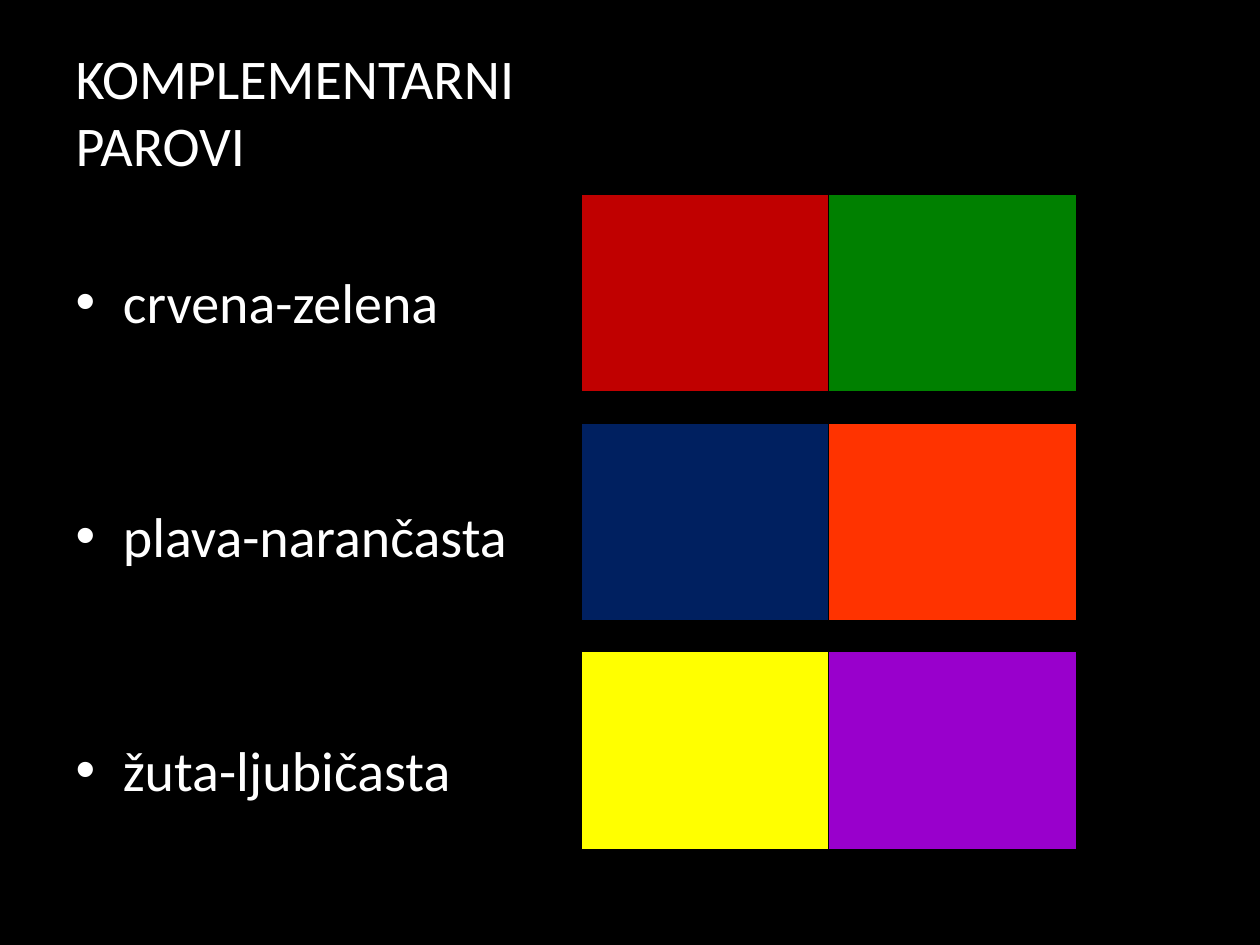
from pptx import Presentation
from pptx.dml.color import RGBColor
from pptx.enum import shapes, text
from pptx.util import Pt

BLACK = RGBColor(0x00, 0x00, 0x00)
WHITE = RGBColor(0xFF, 0xFF, 0xFF)
RED = RGBColor(0xC0, 0x00, 0x00)
GREEN = RGBColor(0x00, 0x80, 0x00)
BLUE = RGBColor(0x00, 0x20, 0x60)
ORANGE = RGBColor(0xFF, 0x33, 0x00)
YELLOW = RGBColor(0xFF, 0xFF, 0x00)
VIOLET = RGBColor(0x99, 0x00, 0xCC)

PAIRS = [
    ("crvena-zelena", RED, GREEN),
    ("plava-narančasta", BLUE, ORANGE),
    ("žuta-ljubičasta", YELLOW, VIOLET),
]


def write(paragraph, words, size=32, font="Calibri", color=WHITE, before=0):
    paragraph.alignment = text.PP_ALIGN.LEFT
    paragraph.space_before = Pt(before)
    run = paragraph.add_run()
    run.text = words
    run.font.size = Pt(size)
    run.font.name = font
    run.font.color.rgb = color


def place(placeholder, left, top, width, height):
    placeholder.left, placeholder.top = Pt(left), Pt(top)
    placeholder.width, placeholder.height = Pt(width), Pt(height)
    frame = placeholder.text_frame
    frame.word_wrap = True
    frame.auto_size = text.MSO_AUTO_SIZE.NONE
    frame.vertical_anchor = text.MSO_ANCHOR.TOP
    return frame


def add_heading(slide, left, top, width, height):
    frame = place(slide.shapes.title, left, top, width, height)
    write(frame.paragraphs[0], "KOMPLEMENTARNI PAROVI")


def add_pair_names(slide, left, top, width, height, gap=95.3):
    frame = place(slide.placeholders[1], left, top, width, height)
    for row, (name, _, _) in enumerate(PAIRS):
        paragraph = frame.add_paragraph() if row else frame.paragraphs[0]
        write(paragraph, name, before=gap if row else 0)
        properties = paragraph._p.get_or_add_pPr()
        properties.set("marL", str(Pt(27)))
        properties.set("indent", str(-Pt(27)))


def add_swatches(slide, left, top, width, height, gap=17.7):
    swatch_width = width / 2
    swatch_height = (height - gap * (len(PAIRS) - 1)) / len(PAIRS)
    for row, (_, *colors) in enumerate(PAIRS):
        for column, color in enumerate(colors):
            swatch = slide.shapes.add_shape(
                shapes.MSO_SHAPE.RECTANGLE,
                Pt(left + column * swatch_width),
                Pt(top + row * (swatch_height + gap)),
                Pt(swatch_width), Pt(swatch_height))
            swatch.shadow.inherit = False
            swatch.fill.solid()
            swatch.fill.fore_color.rgb = color
            swatch.line.color.rgb = BLACK
            swatch.line.width = Pt(0.75)


def main():
    presentation = Presentation()
    presentation.slide_width, presentation.slide_height = Pt(720), Pt(540)
    slide = presentation.slides.add_slide(presentation.slide_layouts[1])
    slide.background.fill.solid()
    slide.background.fill.fore_color.rgb = BLACK
    add_heading(slide, 36, 21, 296, 88)
    add_pair_names(slide, 36, 149, 296, 359)
    add_swatches(slide, 332, 111, 283, 374.4)
    presentation.save("out.pptx")


if __name__ == "__main__":
    main()
